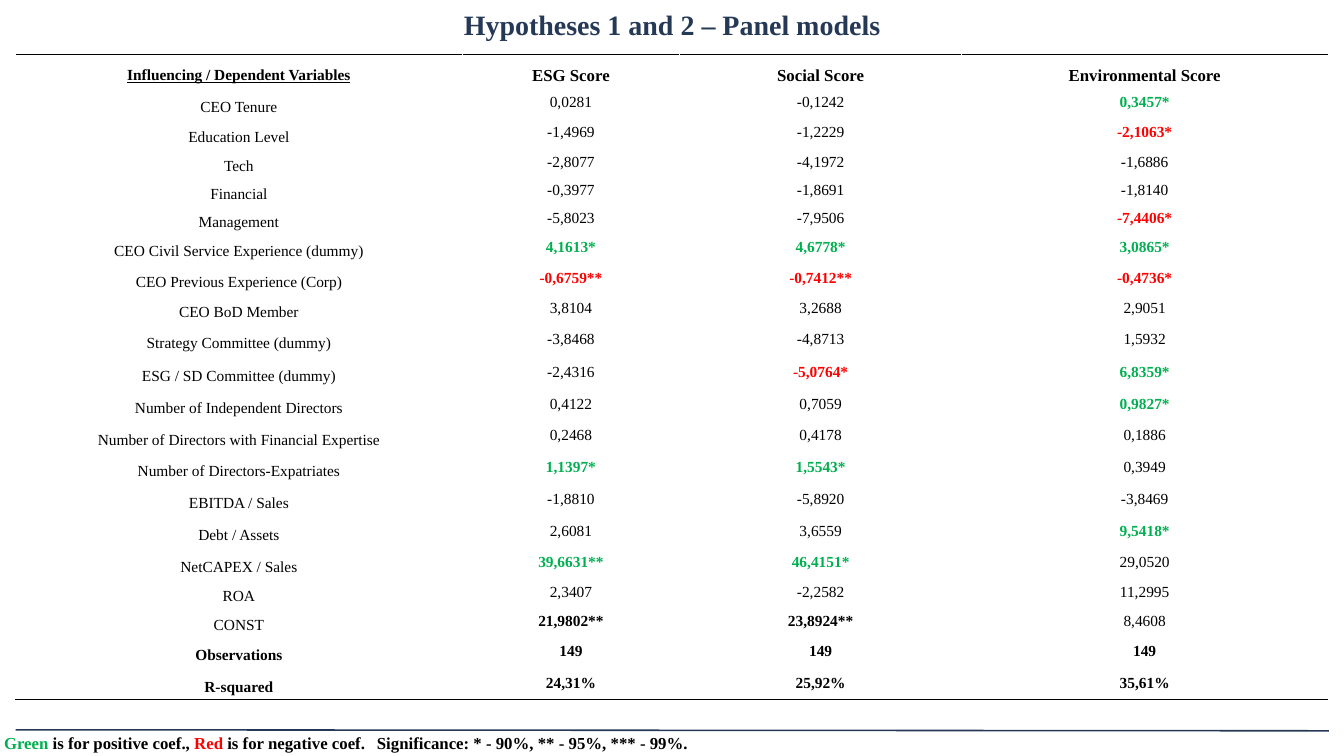
from dataclasses import dataclass

from pptx import Presentation
from pptx.dml.color import RGBColor as Rgb
from pptx.enum.shapes import MSO_CONNECTOR as Connector
from pptx.enum.text import MSO_ANCHOR as Anchor, MSO_AUTO_SIZE as AutoSize, PP_ALIGN as Align
from pptx.oxml.ns import qn
from pptx.util import Emu, Pt
from lxml.etree import SubElement

PX = 9144  # 100 px to the inch


@dataclass(frozen=True)
class Theme:
    font: str = "Times New Roman"
    navy: str = "253957"
    black: str = "000000"
    green: str = "00B050"
    red: str = "FF0000"
    title_size: int = 40
    heading_size: int = 24
    body_size: int = 22


THEME = Theme()

COLUMN_WIDTHS = [886, 432, 559, 727]
ROW_HEIGHTS = [68, 56, 63, 54, 54, 54, 62, 61, 56, 68] + [63] * 7 + [54, 58, 63, 63]
HEADINGS = ["Influencing / Dependent Variables", "ESG Score", "Social Score", "Environmental Score"]
RESULTS = [
    ["CEO Tenure", "0,0281", "-0,1242", "0,3457*"],
    ["Education Level", "-1,4969", "-1,2229", "-2,1063*"],
    ["Tech", "-2,8077", "-4,1972", "-1,6886"],
    ["Financial", "-0,3977", "-1,8691", "-1,8140"],
    ["Management", "-5,8023", "-7,9506", "-7,4406*"],
    ["CEO Civil Service Experience (dummy)", "4,1613*", "4,6778*", "3,0865*"],
    ["CEO Previous Experience (Corp)", "-0,6759**", "-0,7412**", "-0,4736*"],
    ["CEO BoD Member", "3,8104", "3,2688", "2,9051"],
    ["Strategy Committee (dummy)", "-3,8468", "-4,8713", "1,5932"],
    ["ESG / SD Committee (dummy)", "-2,4316", "-5,0764*", "6,8359*"],
    ["Number of Independent Directors", "0,4122", "0,7059", "0,9827*"],
    ["Number of Directors with Financial Expertise", "0,2468", "0,4178", "0,1886"],
    ["Number of Directors-Expatriates", "1,1397*", "1,5543*", "0,3949"],
    ["EBITDA / Sales", "-1,8810", "-5,8920", "-3,8469"],
    ["Debt / Assets", "2,6081", "3,6559", "9,5418*"],
    ["NetCAPEX / Sales", "39,6631**", "46,4151*", "29,0520"],
    ["ROA", "2,3407", "-2,2582", "11,2995"],
    ["CONST", "21,9802**", "23,8924**", "8,4608"],
    ["Observations", "149", "149", "149"],
    ["R-squared", "24,31%", "25,92%", "35,61%"],
]
SUMMARY_ROWS = {"Observations", "R-squared"}
SPACED_ROWS = {"Number of Directors-Expatriates", "EBITDA / Sales", "Debt / Assets",
               "NetCAPEX / Sales", "ROA", "CONST"}


def px(*lengths):
    return [Emu(length * PX) for length in lengths]


def set_values(target, values):
    for name, value in values.items():
        setattr(target, name, value)


def add_span(para, text, size, color=THEME.black, bold=True, underline=False):
    span = para.add_run()
    span.text = text
    set_values(span.font, {"name": THEME.font, "size": Pt(size), "bold": bold,
                           "underline": underline})
    span.font.color.rgb = Rgb.from_string(color)


def format_frame(shape, place):
    """Place a text shape and give it the common frame settings."""
    set_values(shape, dict(zip(("left", "top", "width", "height"), px(*place))))
    margins = dict.fromkeys(("margin_left", "margin_top", "margin_right", "margin_bottom"), Emu(8 * PX))
    set_values(shape.text_frame, {"word_wrap": True, "vertical_anchor": Anchor.MIDDLE,
                                  "auto_size": AutoSize.SHAPE_TO_FIT_TEXT, **margins})
    return shape.text_frame.paragraphs[0]


def add_title(page, text):
    para = format_frame(page.shapes.title, (0, 7, 2667, 83))
    para.alignment = Align.CENTER
    add_span(para, text, THEME.title_size, THEME.navy)


def add_border(cell, side):
    line = SubElement(cell._tc.get_or_add_tcPr(), qn(f"a:{side}"), w=str(Pt(1)))
    fill = SubElement(line, qn("a:solidFill"))
    SubElement(fill, qn("a:srgbClr"), val=THEME.black)


def value_style(label, value):
    """Significant coefficients are bold and coloured by sign; the constant stays black."""
    significant = value.endswith("*")
    color = THEME.black
    if significant and label != "CONST":
        color = THEME.red if value.startswith("-") else THEME.green
    return {"color": color, "bold": significant or label in SUMMARY_ROWS}


def fill_cell(cell, text, label, row, column):
    set_values(cell, {"margin_left": Emu(5 * PX), "margin_right": Emu(5 * PX), "margin_top": 0,
                      "margin_bottom": 0, "vertical_anchor": Anchor.MIDDLE})
    # Borders come before the fill in the cell properties
    if row == 0:
        add_border(cell, "lnT")
    if row == len(RESULTS):
        add_border(cell, "lnB")
    cell.fill.background()

    para = cell.text_frame.paragraphs[0]
    para.alignment = Align.CENTER
    if row == 0 or column == 0:
        para.line_spacing = 1.5
    if column == 0 and label in SPACED_ROWS:
        para.space_after = Pt(10)

    if row == 0:
        size = THEME.heading_size if column else THEME.body_size
        add_span(para, text, size, underline=column == 0)
    else:
        add_span(para, text, THEME.body_size, **value_style(label, text))


def add_results(page):
    rows = [HEADINGS] + RESULTS
    table = page.shapes.add_table(len(rows), len(HEADINGS), *px(31, 108, 2603, 1275)).table
    set_values(table, {"first_row": False, "horz_banding": False})
    for column, width in zip(table.columns, px(*COLUMN_WIDTHS)):
        column.width = width
    for row, height in zip(table.rows, px(*ROW_HEIGHTS)):
        row.height = height
    for r, texts in enumerate(rows):
        for c, text in enumerate(texts):
            fill_cell(table.cell(r, c), text, texts[0], r, c)


def add_rule(page):
    rule = page.shapes.add_connector(Connector.STRAIGHT, *px(31, 1448, 2637, 1450))
    rule.line.color.rgb = Rgb.from_string(THEME.navy)
    rule.line.width = Pt(2.25)
    SubElement(rule._element.spPr, qn("a:effectLst"))


def add_legend(page):
    place = (0, 1446, 2667, 56)
    para = format_frame(page.shapes.add_textbox(*px(*place)), place)
    # A tab stop sets the significance key apart
    tabs = SubElement(para._p.get_or_add_pPr(), qn("a:tabLst"))
    SubElement(tabs, qn("a:tab"), pos=str(740 * PX), algn="l")
    for text, color in [
        ("Green ", THEME.green),
        ("is for positive coef., ", THEME.black),
        ("Red ", THEME.red),
        ("is for negative coef.\tSignificance: * - 90%, ** - 95%, *** - 99%.", THEME.black),
    ]:
        add_span(para, text, THEME.heading_size, color)


def main():
    deck = Presentation()
    deck.slide_width, deck.slide_height = px(2667, 1500)
    page = deck.slides.add_slide(deck.slide_layouts.get_by_name("Title Only"))
    add_title(page, "Hypotheses 1 and 2 – Panel models")
    add_results(page)
    add_rule(page)
    add_legend(page)
    deck.save("out.pptx")


if __name__ == "__main__":
    main()
